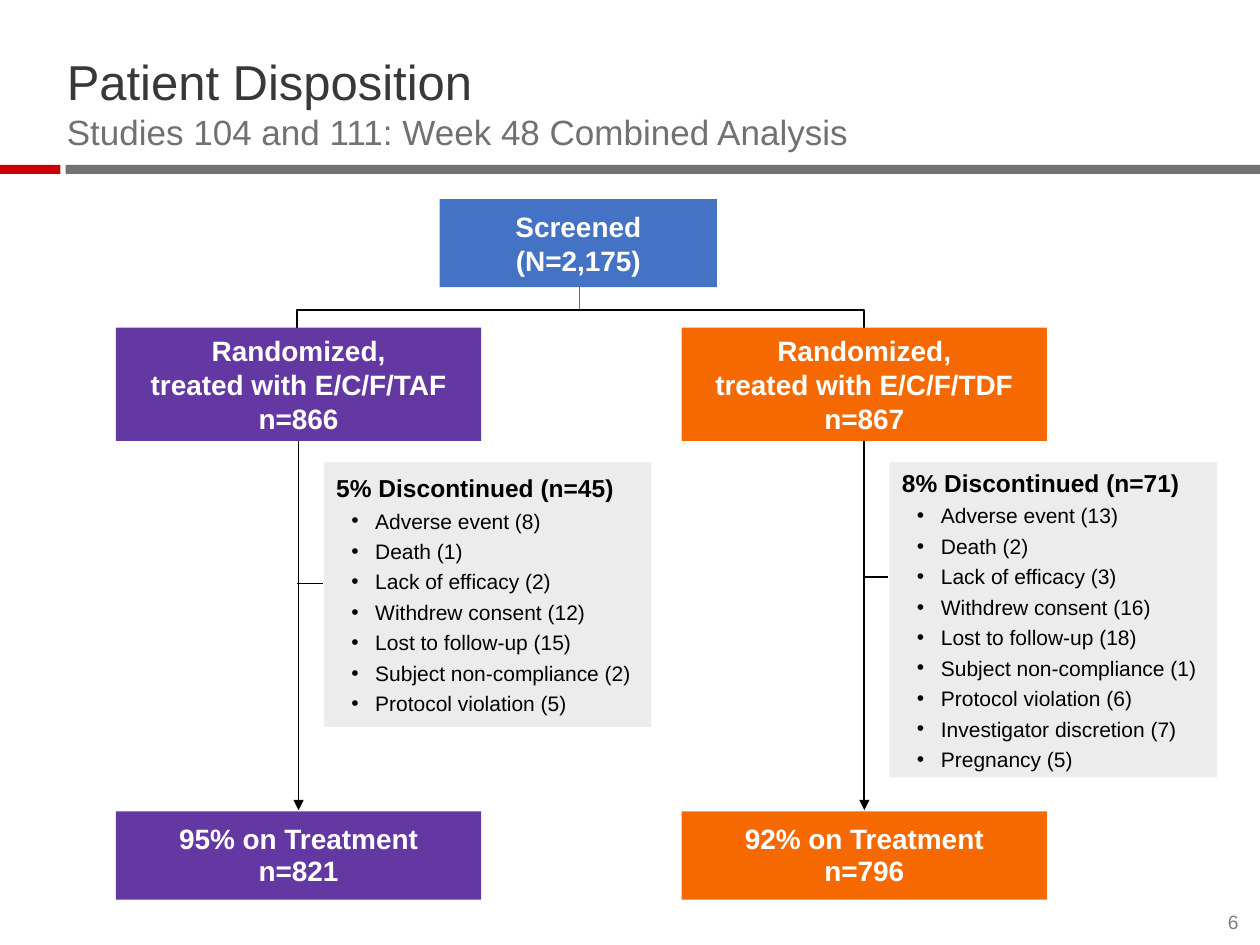
from pptx import Presentation
from pptx import util as u
from pptx.dml.color import RGBColor
from pptx.enum import shapes, text
from pptx.oxml import parse_xml
from pptx.oxml.ns import nsdecls, qn
from lxml import etree

Inches, Pt = u.Inches, u.Pt
THEME = {
    "font": "Arial",
    "blue": "4472C4", "purple": "6338A2", "orange": "F66900", "red": "CC0000",
    "panel": "ECECEC", "gray": "717171", "dark": "383838", "page": "7F7F7F",
    "black": "000000", "white": "FFFFFF",
    "title": 28, "subtitle": 20, "box": 16, "heading": 14, "item": 12, "number": 11,
}


def add_run(p, words, size, color, bold=False):
    r = p.add_run()
    r.text = words
    for name, value in {"name": THEME["font"], "size": Pt(THEME[size]), "bold": bold}.items():
        setattr(r.font, name, value)
    r.font.color.rgb = RGBColor.from_string(THEME[color])


def add_box(left, top, width, height, fill, lines=(), spacing=1.0):
    sp = s.shapes.add_shape(shapes.MSO_SHAPE.RECTANGLE, Inches(left), Inches(top), Inches(width), Inches(height))
    sp.shadow.inherit = False
    sp.fill.solid()
    sp.fill.fore_color.rgb = RGBColor.from_string(THEME[fill])
    sp.line.fill.background()
    tf = sp.text_frame
    tf.word_wrap = True
    tf.vertical_anchor = text.MSO_ANCHOR.MIDDLE
    for i, line in enumerate(lines):
        p = tf.add_paragraph() if i else tf.paragraphs[0]
        p.alignment = text.PP_ALIGN.CENTER
        p.line_spacing = spacing
        add_run(p, line, "box", "white", True)
    return sp


prs = Presentation()
prs.slide_width, prs.slide_height = Inches(10), Inches(7.5)
s = prs.slides.add_slide(prs.slide_layouts[5])

add_box(0.52, 1.31, 9.48, 0.07, "gray")
add_box(0, 1.31, 0.48, 0.07, "red")

title = s.shapes.title
number = s.shapes.add_textbox(Inches(9.56), Inches(7.23), Inches(0.27), Inches(0.18))
for name, value in {"left": 0.53, "top": 0.47, "width": 9, "height": 0.74}.items():
    setattr(title, name, Inches(value))
frame = {"margin_left": 0, "margin_right": 0, "margin_top": 0, "margin_bottom": 0,
         "word_wrap": True, "auto_size": text.MSO_AUTO_SIZE.NONE,
         "vertical_anchor": text.MSO_ANCHOR.BOTTOM}
for sp in (title, number):
    for name, value in frame.items():
        setattr(sp.text_frame, name, value)

p = title.text_frame.paragraphs[0]
p.alignment = text.PP_ALIGN.LEFT
add_run(p, "Patient Disposition", "title", "dark")
p.add_line_break()
add_run(p, "Studies 104 and 111: Week 48 Combined Analysis", "subtitle", "gray")
p = number.text_frame.paragraphs[0]
p.alignment = text.PP_ALIGN.RIGHT
add_run(p, "6", "number", "page")

bracket = s.shapes.add_shape(shapes.MSO_SHAPE.RIGHT_BRACKET, Inches(4.17), Inches(0.65), Inches(0.88), Inches(4.5))
bracket.rotation = 270
bracket.adjustments[0] = 0
bracket.shadow.inherit = False
bracket.fill.background()
bracket.line.color.rgb = RGBColor.from_string(THEME["black"])
bracket.line.width = Pt(1)

add_box(3.49, 1.58, 2.2, 0.7, "blue", ["Screened", "(N=2,175)"])

lines = [
    (2.37, 3.33, 2.37, 6.43, "black", True),
    (6.86, 3.33, 6.86, 6.43, "black", True),
    (4.6, 2.25, 4.6, 2.45, "gray", False),
    (2.36, 4.63, 2.56, 4.63, "black", False),
    (6.85, 4.58, 7.05, 4.58, "black", False),
]
for x1, y1, x2, y2, color, arrow in lines:
    line = s.shapes.add_connector(shapes.MSO_CONNECTOR.STRAIGHT, Inches(x1), Inches(y1), Inches(x2), Inches(y2))
    line.line.color.rgb = RGBColor.from_string(THEME[color])
    line.line.width = Pt(1)
    if arrow:
        line.line._get_or_add_ln().append(parse_xml(f'<a:tailEnd {nsdecls("a")} type="triangle"/>'))
    etree.SubElement(line._element.spPr, qn("a:effectLst"))

arms = [
    (0.92, "purple", "TAF", 866, "95%", 821, 2.1, "5% Discontinued (n=45)", [
        "Adverse event (8)", "Death (1)", "Lack of efficacy (2)", "Withdrew consent (12)",
        "Lost to follow-up (15)", "Subject non-compliance (2)", "Protocol violation (5)"]),
    (5.41, "orange", "TDF", 867, "92%", 796, 2.5, "8% Discontinued (n=71)", [
        "Adverse event (13)", "Death (2)", "Lack of efficacy (3)", "Withdrew consent (16)",
        "Lost to follow-up (18)", "Subject non-compliance (1)", "Protocol violation (6)",
        "Investigator discretion (7)", "Pregnancy (5)"]),
]
for left, color, drug, treated, share, remaining, height, heading, reasons in arms:
    add_box(left, 2.6, 2.9, 0.9, color, ["Randomized,", f"treated with E/C/F/{drug}", f"n={treated}"])
    add_box(left, 6.44, 2.9, 0.7, color, [f"{share} on Treatment", f"n={remaining}"], 0.95)
    tf = add_box(left + 1.65, 3.67, 2.6, height, "panel").text_frame
    p = tf.paragraphs[0]
    p.alignment = text.PP_ALIGN.LEFT
    p.space_before = Pt(3)
    add_run(p, heading, "heading", "black", True)
    for reason in reasons:
        p = tf.add_paragraph()
        p.alignment = text.PP_ALIGN.LEFT
        p.space_before = Pt(3)
        add_run(p, reason, "item", "black")
        pPr = p._p.get_or_add_pPr()
        pPr.set("marL", str(Inches(0.31)))
        pPr.set("indent", str(Inches(-0.19)))
        etree.SubElement(pPr, qn("a:buFont")).set("typeface", THEME["font"])
        etree.SubElement(pPr, qn("a:buChar")).set("char", "•")

prs.save("out.pptx")
